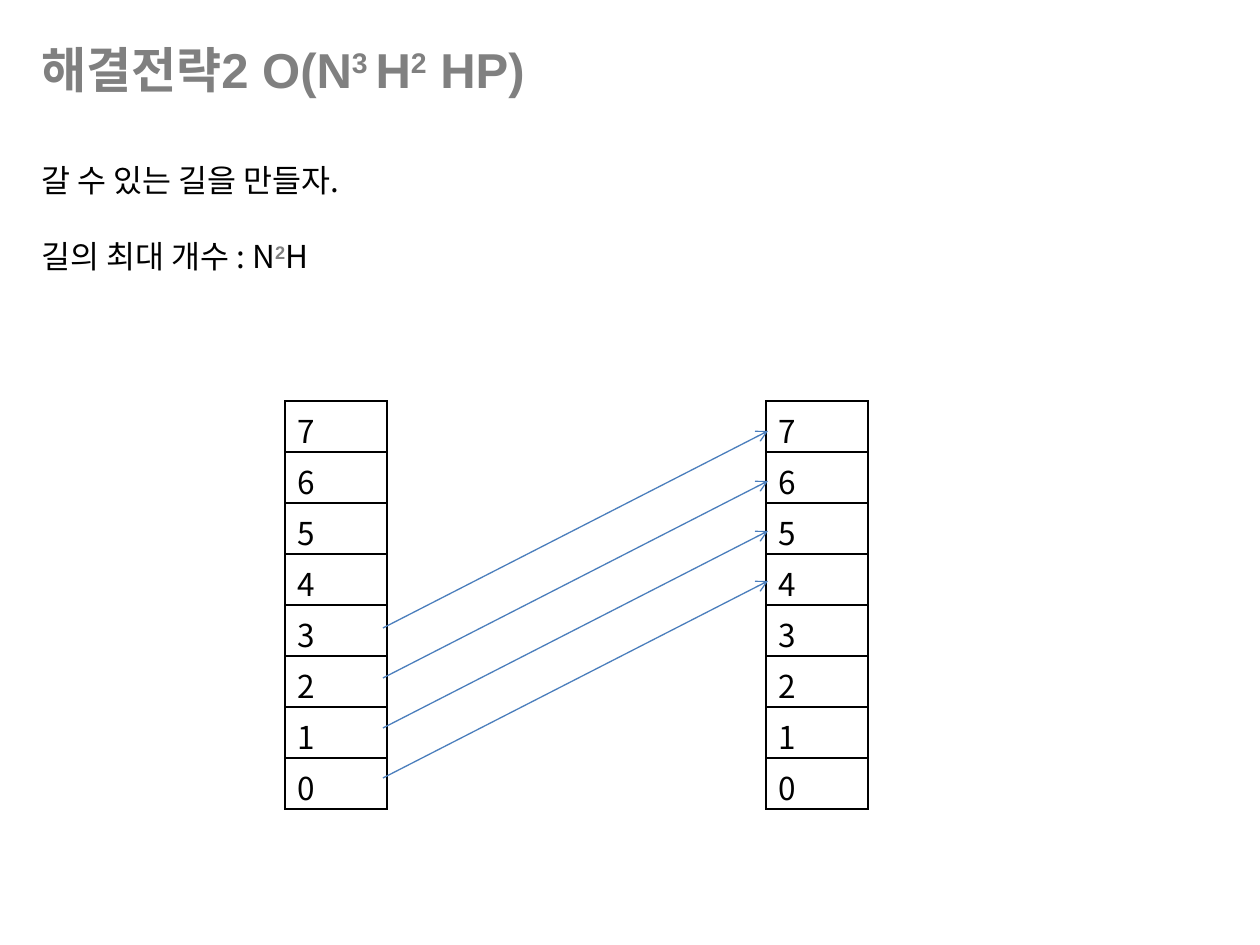
from dataclasses import dataclass

from lxml import etree
from pptx import Presentation
from pptx import util as u
from pptx.dml.color import RGBColor
from pptx.enum import shapes, text
from pptx.oxml import ns


@dataclass(frozen=True)
class Theme:
    ink: str = "000000"
    gray: str = "808080"
    blue: str = "4B7EBC"
    head: int = 28
    body: int = 18
    gap: float = 21.7
    latin: str = "Arial"
    hangul: str = "Noto Sans CJK KR"
    rule: float = 1
    arrow: float = 0.75


def px(n):
    return u.Emu(round(n * 914400 / 126))


def sub(node, tag, **attrs):
    return etree.SubElement(node, ns.qn(tag), **attrs)


class Board:
    def __init__(self, deck, theme):
        self.theme = theme
        self.slide = deck.slides.add_slide(deck.slide_layouts[6])

    def run(self, para, words, size, accent=False, raised=False):
        t = self.theme
        run = para.add_run()
        run.text = words
        font = run.font
        font.size = u.Pt(size)
        font.bold = accent
        font.name = t.latin if accent else t.hangul
        font.color.rgb = RGBColor.from_string(t.gray if accent else t.ink)
        props = run._r.get_or_add_rPr()
        sub(props, "a:ea", typeface=t.hangul)
        if raised:
            props.set("baseline", "30000")

    def text(self, x, y, w, h, size, paras):
        frame = self.slide.shapes.add_textbox(px(x), px(y), px(w), px(h)).text_frame
        frame.word_wrap = False
        frame.auto_size = text.MSO_AUTO_SIZE.SHAPE_TO_FIT_TEXT
        for i, runs in enumerate(paras):
            para = frame.add_paragraph() if i else frame.paragraphs[0]
            if i:
                para.space_before = u.Pt(self.theme.gap)
            for words, *marks in runs:
                self.run(para, words, size, *marks)

    def edge(self, cell):
        props = cell._tc.get_or_add_tcPr()
        for i, side in enumerate(("L", "R", "T", "B")):
            line = etree.Element(ns.qn(f"a:ln{side}"), w=str(u.Pt(self.theme.rule)))
            sub(sub(line, "a:solidFill"), "a:srgbClr", val=self.theme.ink)
            props.insert(i, line)

    def stack(self, x, y, w, step, labels):
        frame = self.slide.shapes.add_table(
            len(labels), 1, px(x), px(y), px(w), px(step * len(labels)))
        table = frame.table
        table.first_row = table.horz_banding = False
        table.columns[0].width = px(w)
        for i, label in enumerate(labels):
            table.rows[i].height = px(step)
            cell = table.cell(i, 0)
            cell.fill.background()
            self.edge(cell)
            self.run(cell.text_frame.paragraphs[0], label, self.theme.body)

    def arrow(self, x1, y1, x2, y2):
        link = self.slide.shapes.add_connector(
            shapes.MSO_CONNECTOR.STRAIGHT, px(x1), px(y1), px(x2), px(y2))
        link.line.color.rgb = RGBColor.from_string(self.theme.blue)
        link.line.width = u.Pt(self.theme.arrow)
        sub(link.line._get_or_add_ln(), "a:tailEnd", type="arrow")
        sub(link._element.spPr, "a:effectLst")


def main():
    deck = Presentation()
    deck.slide_width, deck.slide_height = px(1260), px(945)
    theme = Theme()
    board = Board(deck, theme)

    board.text(29, 33, 557, 72, theme.head, [[
        ("해결전략2 O(N", True), ("3 ", True, True), ("H", True),
        ("2", True, True), (" HP)", True)]])
    board.text(29, 155, 364, 127, theme.body, [
        [("갈 수 있는 길을 만들자.",)],
        [("길의 최대 개수 : N",), ("2", True, True), ("H",)]])

    floors = [str(n) for n in range(7, -1, -1)]
    for left in (285, 766):
        board.stack(left, 401, 102, 51, floors)
    for i in range(4):
        board.arrow(383, 628 + 50 * i, 768, 431 + 50 * i)

    deck.save("out.pptx")


if __name__ == "__main__":
    main()
